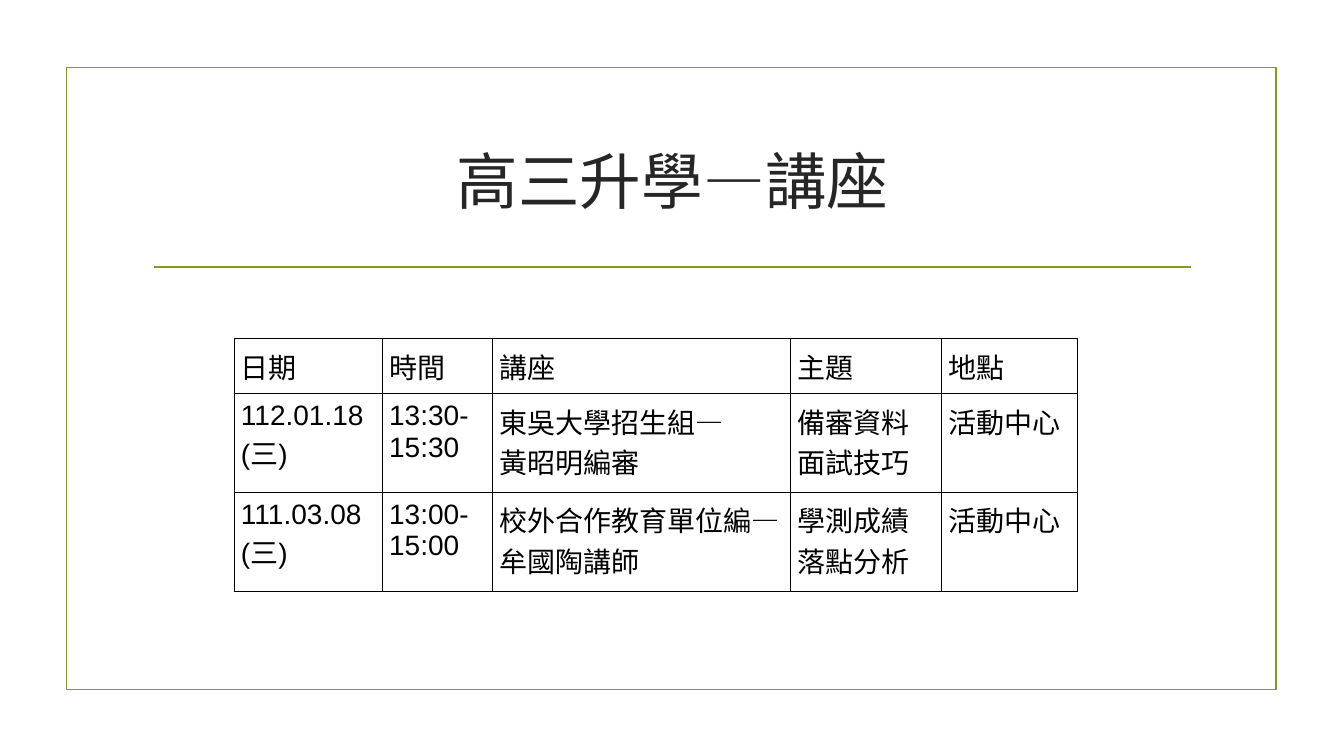
from lxml import etree
from pptx import Presentation
from pptx.dml.color import RGBColor
from pptx.enum.shapes import MSO_CONNECTOR, MSO_SHAPE
from pptx.enum.text import MSO_ANCHOR, PP_ALIGN
from pptx.oxml.ns import qn
from pptx.util import Inches, Pt

STRAIGHT = MSO_CONNECTOR.STRAIGHT
RECTANGLE = MSO_SHAPE.RECTANGLE
MIDDLE = MSO_ANCHOR.MIDDLE
CENTER = PP_ALIGN.CENTER

# Content
TITLE_RUNS = [
    ("高三升學", "Times New Roman"),
    ("—", "Noto Sans CJK TC"),
    ("講座", "Times New Roman"),
]
LECTURES = [
    [["日期"], ["時間"], ["講座"], ["主題"], ["地點"]],
    [["112.01.18", "(三)"], ["13:30-15:30"], ["東吳大學招生組—", "黃昭明編審"],
     ["備審資料", "面試技巧"], ["活動中心"]],
    [["111.03.08", "(三)"], ["13:00-15:00"], ["校外合作教育單位編—牟國陶講師"],
     ["學測成績", "落點分析"], ["活動中心"]],
]
COLUMN_WIDTHS = [1.47, 1.09, 2.96, 1.5, 1.35]
ROW_HEIGHTS = [0.47, 0.98, 0.98]
CELL_INSET = Inches(0.07)
CJK_FONT = "Noto Sans CJK TC"
COLORS = {"olive": "83992A", "title": "262626", "text": "000000", "border": "000000"}


def color(name):
    return RGBColor.from_string(COLORS[name])


def add_run(paragraph, text, font_name, size, color_name):
    run = paragraph.add_run()
    run.text = text
    run.font.name = font_name
    run.font.size = Pt(size)
    run.font.color.rgb = color(color_name)
    east_asian = etree.SubElement(run.font._element, qn("a:ea"))
    east_asian.set("typeface", CJK_FONT)


def add_borders(cell):
    properties = cell._tc.get_or_add_tcPr()
    for side in ("lnL", "lnR", "lnT", "lnB"):
        line = etree.SubElement(properties, qn(f"a:{side}"), w=str(Pt(0.6)))
        fill = etree.SubElement(line, qn("a:solidFill"))
        etree.SubElement(fill, qn("a:srgbClr"), val=COLORS["border"])


def fill_cell(cell, lines):
    add_borders(cell)
    cell.fill.background()
    cell.margin_left = cell.margin_right = CELL_INSET
    cell.margin_top = cell.margin_bottom = CELL_INSET
    frame = cell.text_frame
    for index, text in enumerate(lines):
        paragraph = frame.add_paragraph() if index else frame.paragraphs[0]
        add_run(paragraph, text, "Arial", 20, "text")


def main():
    presentation = Presentation()
    presentation.slide_width = Inches(13.33)
    presentation.slide_height = Inches(7.5)
    slide = presentation.slides.add_slide(presentation.slide_layouts[5])
    shapes = slide.shapes
    title = shapes.title

    # Frame and rule, placed behind the title
    frame = shapes.add_shape(RECTANGLE, Inches(0.66), Inches(0.67), Inches(12), Inches(6.17))
    frame.shadow.inherit = False
    frame.fill.background()
    rule = shapes.add_connector(STRAIGHT, Inches(1.53), Inches(2.65), Inches(11.81), Inches(2.65))
    etree.SubElement(rule._element.spPr, qn("a:effectLst"))
    for outlined in (frame, rule):
        outlined.line.color.rgb = color("olive")
        outlined.line.width = Pt(1.25)
        title._element.addprevious(outlined._element)

    # Title
    title.left, title.top = Inches(1.42), Inches(1.07)
    title.width, title.height = Inches(10.5), Inches(1.43)
    title.text_frame.vertical_anchor = MIDDLE
    title.text_frame.word_wrap = True
    heading = title.text_frame.paragraphs[0]
    heading.alignment = CENTER
    for text, font_name in TITLE_RUNS:
        add_run(heading, text, font_name, 44, "title")

    # Lecture table
    table = shapes.add_table(
        len(ROW_HEIGHTS), len(COLUMN_WIDTHS), Inches(2.32), Inches(3.36),
        Inches(sum(COLUMN_WIDTHS)), Inches(sum(ROW_HEIGHTS))).table
    table.first_row = table.horz_banding = False
    for column, width in zip(table.columns, COLUMN_WIDTHS):
        column.width = Inches(width)
    for row, height, lecture in zip(table.rows, ROW_HEIGHTS, LECTURES):
        row.height = Inches(height)
        for cell, lines in zip(row.cells, lecture):
            fill_cell(cell, lines)

    presentation.save("out.pptx")


if __name__ == "__main__":
    main()
